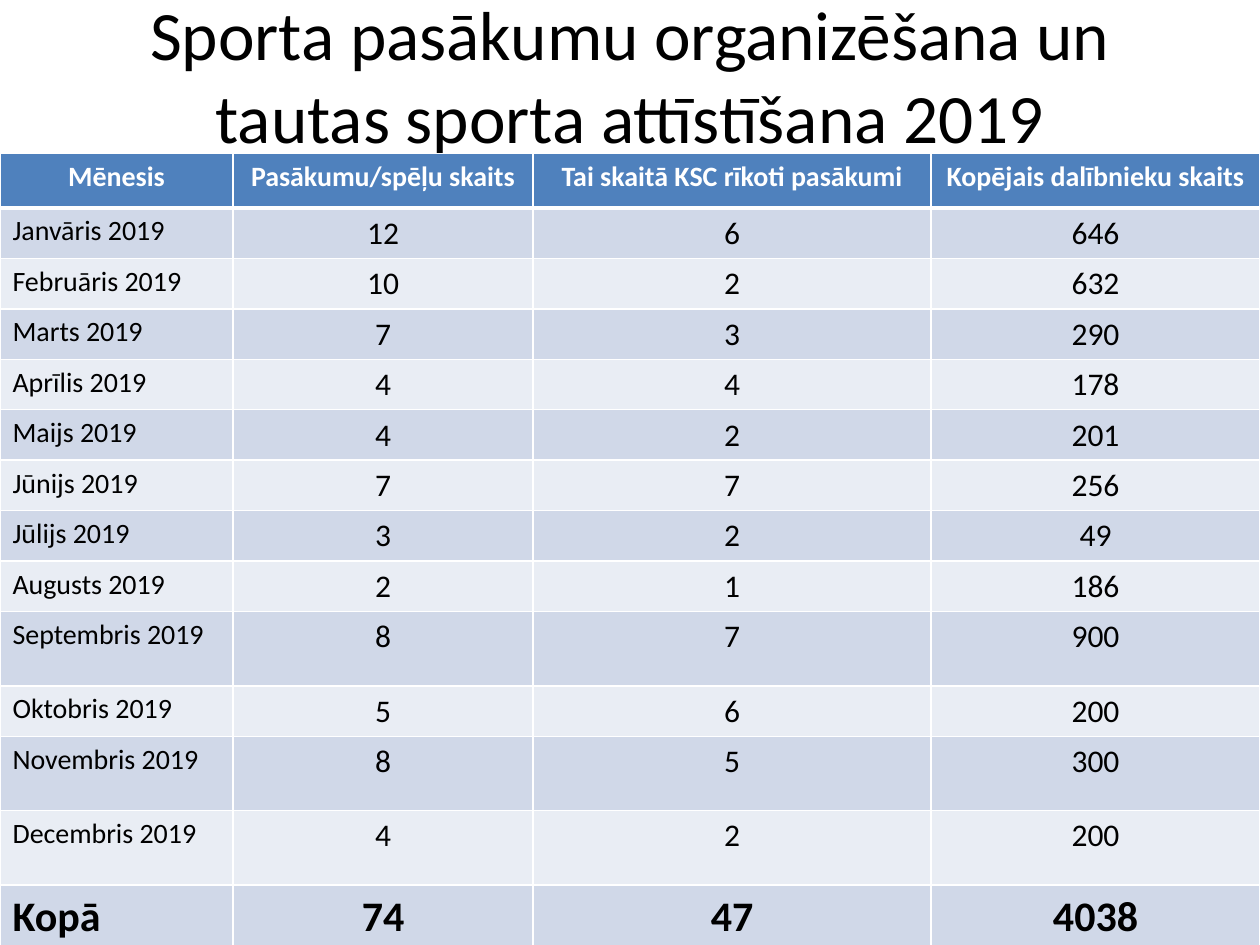
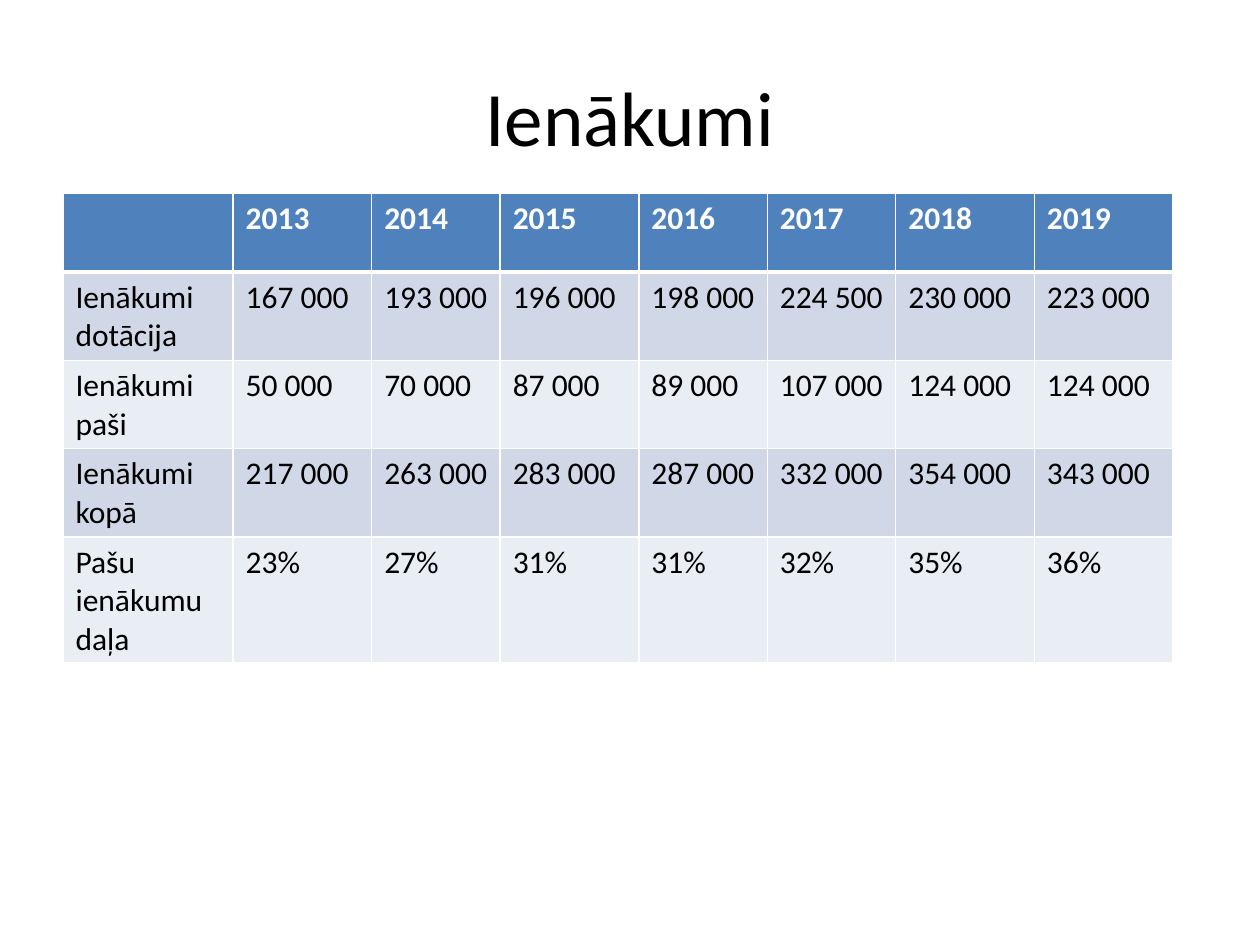
from lxml import etree
from pptx import Presentation
from pptx.dml.color import RGBColor
from pptx.enum.text import MSO_ANCHOR, PP_ALIGN
from pptx.oxml.ns import qn
from pptx.util import Inches, Pt

LEFT = PP_ALIGN.LEFT
CENTER = PP_ALIGN.CENTER
MIDDLE = MSO_ANCHOR.MIDDLE

FONT = "Calibri"
BLACK = "000000"
WHITE = "FFFFFF"
HEADER_FILL = "4F81BD"
BAND_FILLS = ("D0D8E8", "E9EDF4")

EVENT_HEADERS = ["Mēnesis", "Pasākumu/spēļu skaits",
                 "Tai skaitā KSC rīkoti pasākumi", "Kopējais dalībnieku skaits"]
EVENT_MONTHS = [
    ("Janvāris", 12, 6, 646),
    ("Februāris", 10, 2, 632),
    ("Marts", 7, 3, 290),
    ("Aprīlis", 4, 4, 178),
    ("Maijs", 4, 2, 201),
    ("Jūnijs", 7, 7, 256),
    ("Jūlijs", 3, 2, 49),
    ("Augusts", 2, 1, 186),
    ("Septembris", 8, 7, 900),
    ("Oktobris", 5, 6, 200),
    ("Novembris", 8, 5, 300),
    ("Decembris", 4, 2, 200),
]
EVENT_TOTAL = ["Kopā", 74, 47, 4038]
TALL_MONTHS = ("Septembris", "Novembris", "Decembris")

INCOME_ROWS = [
    ["", *range(2013, 2020)],
    ["Ienākumi dotācija", "167 000", "193 000", "196 000", "198 000",
     "224 500", "230 000", "223 000"],
    ["Ienākumi paši", "50 000", "70 000", "87 000", "89 000",
     "107 000", "124 000", "124 000"],
    ["Ienākumi kopā", "217 000", "263 000", "283 000", "287 000",
     "332 000", "354 000", "343 000"],
    ["Pašu ienākumu daļa", "23%", "27%", "31%", "31%", "32%", "35%", "36%"],
]


def color(hex_value):
    return RGBColor.from_string(hex_value)


class Deck:
    def __init__(self):
        self.presentation = Presentation()
        self.presentation.slide_width = Inches(10)
        self.presentation.slide_height = Inches(7.5)
        self.slide = None

    def add_slide(self):
        self.slide = self.presentation.slides.add_slide(
            self.presentation.slide_layouts[6])

    def add_text(self, frame, text, size, font_color, alignment, bold=False):
        paragraph = frame.paragraphs[0]
        paragraph.alignment = alignment
        run = paragraph.add_run()
        run.text = str(text)
        run.font.name = FONT
        run.font.size = Pt(size)
        run.font.bold = bold
        run.font.color.rgb = color(font_color)

    def title(self, text, top, size, bottom_inset=0.05):
        shape = self.slide.shapes.add_textbox(
            Inches(0.5), Inches(top), Inches(9), Inches(1.25))
        frame = shape.text_frame
        frame.word_wrap = True
        frame.vertical_anchor = MIDDLE
        frame.margin_bottom = Inches(bottom_inset)
        self.add_text(frame, text, size, BLACK, CENTER)

    def borders(self, cell, top, bottom):
        properties = cell._tc.get_or_add_tcPr()
        widths = {"a:lnL": 1, "a:lnR": 1, "a:lnT": top, "a:lnB": bottom}
        for index, (tag, width) in enumerate(widths.items()):
            line = etree.Element(qn(tag), w=str(Pt(width)))
            fill = etree.SubElement(line, qn("a:solidFill"))
            etree.SubElement(fill, qn("a:srgbClr"), val=WHITE)
            properties.insert(index, line)

    def table(self, rows, place, column_widths, row_heights, text_style):
        shape = self.slide.shapes.add_table(
            len(rows), len(column_widths), *map(Inches, place))
        table = shape.table
        table.horz_banding = False
        for column, width in zip(table.columns, column_widths):
            column.width = Inches(width)
        for row, height in zip(table.rows, row_heights):
            row.height = Inches(height)
        for row_index, values in enumerate(rows):
            header = row_index == 0
            fill = HEADER_FILL if header else BAND_FILLS[(row_index - 1) % 2]
            for column_index, value in enumerate(values):
                cell = table.cell(row_index, column_index)
                cell.fill.solid()
                cell.fill.fore_color.rgb = color(fill)
                self.borders(cell, 3 if row_index == 1 else 1, 3 if header else 1)
                if value != "":
                    size, alignment, bold = text_style(row_index, column_index)
                    self.add_text(cell.text_frame, value, size,
                                  WHITE if header else BLACK, alignment, bold)


def event_style(row_index, column_index):
    if row_index == 0:
        return 16, CENTER, True
    alignment = CENTER if column_index else LEFT
    if row_index > len(EVENT_MONTHS):
        return 24, alignment, True
    return 18 if column_index else 16, alignment, False


def income_style(row_index, column_index):
    return 18, LEFT, row_index == 0


def build_events(deck):
    deck.add_slide()
    deck.title("Sporta pasākumu organizēšana un tautas sporta attīstīšana 2019",
               0.3, 39.6, bottom_inset=0.72)
    months = [(f"{month} 2019", *counts) for month, *counts in EVENT_MONTHS]
    heights = [0.59 if month[0] in TALL_MONTHS else 0.39 for month in EVENT_MONTHS]
    deck.table([EVENT_HEADERS, *months, EVENT_TOTAL], (0, 1.22, 10, 6.37),
               [1.85, 2.38, 3.16, 2.61], [0.43, *heights, 0.58], event_style)


def build_income(deck):
    deck.add_slide()
    deck.title("Ienākumi", 0.29, 44)
    deck.table(INCOME_ROWS, (0.5, 1.53, 8.83, 3.73),
               [1.35, 1.1, 1.02, 1.1, 1.02, 1.02, 1.1, 1.1],
               [0.63] * len(INCOME_ROWS), income_style)


def main():
    deck = Deck()
    build_events(deck)
    build_income(deck)
    deck.presentation.save("out.pptx")


if __name__ == "__main__":
    main()
